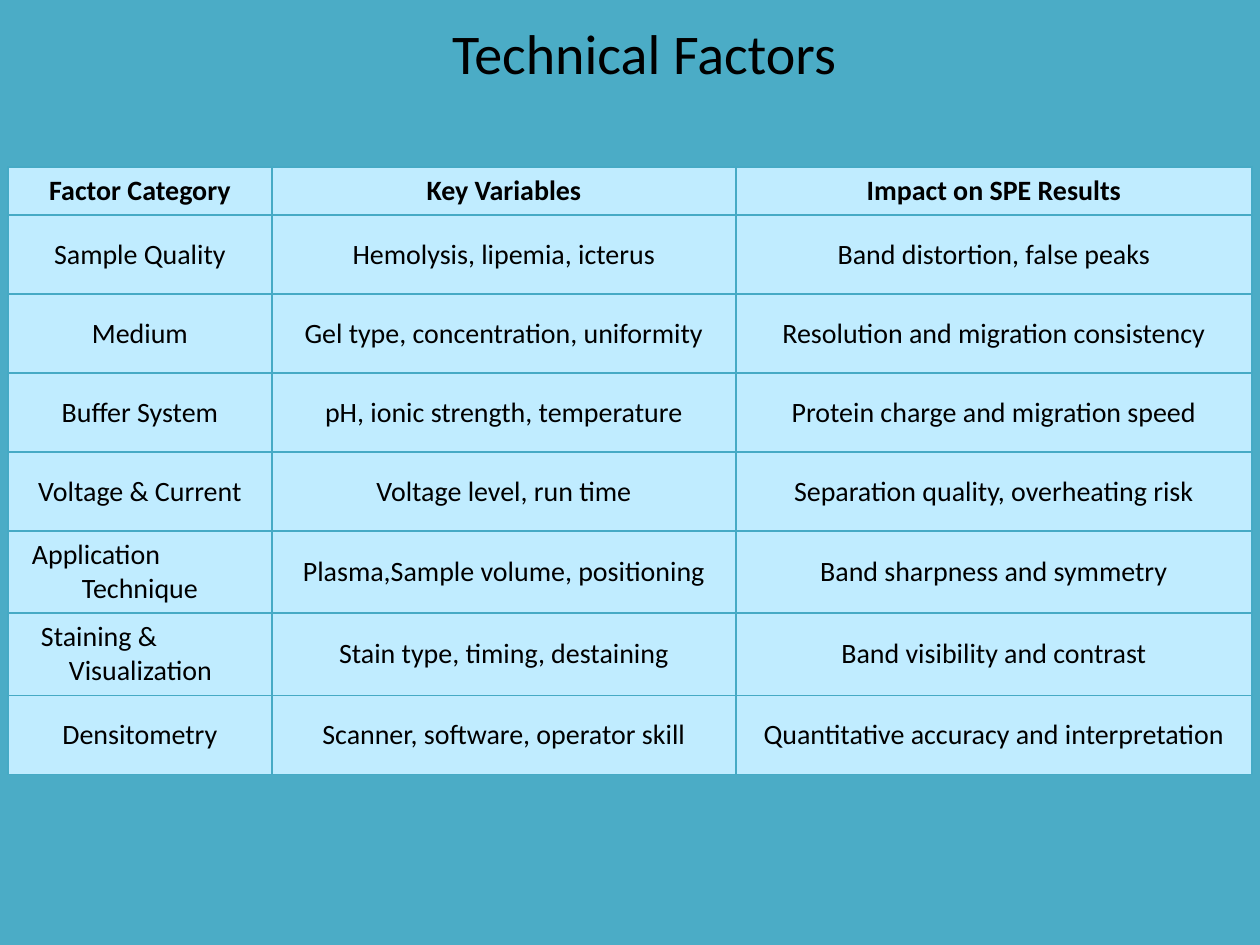
import pptx
import pptx.dml.color
import pptx.enum.text
import pptx.oxml.ns
import pptx.util
from lxml import etree

PX = 914400 / 168
COLORS = {"background": "4BACC6", "cell": "C0ECFF", "border": "46AAC5", "text": "000000"}
ALIGN = pptx.enum.text.PP_ALIGN
MIDDLE = pptx.enum.text.MSO_ANCHOR.MIDDLE

COLUMN_WIDTHS = [264, 464, 516]
HEADER_HEIGHT, ROW_HEIGHT = 47, 79
FACTORS = [
    ("Factor Category", "Key Variables", "Impact on SPE Results"),
    ("Sample Quality", "Hemolysis, lipemia, icterus", "Band distortion, false peaks"),
    ("Medium", "Gel type, concentration, uniformity", "Resolution and migration consistency"),
    ("Buffer System", "pH, ionic strength, temperature", "Protein charge and migration speed"),
    ("Voltage & Current", "Voltage level, run time", "Separation quality, overheating risk"),
    ("Application Technique", "Plasma,Sample volume, positioning", "Band sharpness and symmetry"),
    ("Staining & Visualization", "Stain type, timing, destaining", "Band visibility and contrast"),
    ("Densitometry", "Scanner, software, operator skill", "Quantitative accuracy and interpretation"),
]
# Wrapped labels: left margin and first-line indent in px
HANGING = {"Application Technique": (59, -50), "Staining & Visualization": (46, -28)}


def emu(px):
    return pptx.util.Emu(round(px * PX))


def rgb(name):
    return pptx.dml.color.RGBColor.from_string(COLORS[name])


def write_text(tf, text, size=12, bold=False, align=ALIGN.CENTER, hanging=None):
    tf.word_wrap = True
    p = tf.paragraphs[0]
    p.alignment = align
    if hanging:
        p_pr = p._p.get_or_add_pPr()
        for key, px in zip(("marL", "indent"), hanging):
            p_pr.set(key, str(emu(px)))
    r = p.add_run()
    r.text = text
    r.font.name = "Calibri"
    r.font.size = pptx.util.Pt(size)
    r.font.bold = bold
    r.font.color.rgb = rgb("text")


def set_borders(cell):
    tc_pr = cell._tc.get_or_add_tcPr()
    qn = pptx.oxml.ns.qn
    for i, side in enumerate(("lnL", "lnR", "lnT", "lnB")):
        line = etree.Element(qn(f"a:{side}"), w=str(pptx.util.Pt(0.75)))
        fill = etree.SubElement(line, qn("a:solidFill"))
        etree.SubElement(fill, qn("a:srgbClr"), val=COLORS["border"])
        tc_pr.insert(i, line)


def add_title(s, x, y, w, h):
    tf = s.shapes.add_textbox(emu(x), emu(y), emu(w), emu(h)).text_frame
    write_text(tf, "Technical Factors", size=24)


def add_factor_table(s, x, y, w, h):
    table = s.shapes.add_table(len(FACTORS), len(COLUMN_WIDTHS),
                               emu(x), emu(y), emu(w), emu(h)).table
    table.first_row = table.horz_banding = False
    for column, width in zip(table.columns, COLUMN_WIDTHS):
        column.width = emu(width)
    for i, row in enumerate(FACTORS):
        table.rows[i].height = emu(ROW_HEIGHT if i else HEADER_HEIGHT)
        for j, text in enumerate(row):
            cell = table.cell(i, j)
            cell.vertical_anchor = MIDDLE
            cell.margin_left = cell.margin_right = emu(15)
            cell.margin_top = cell.margin_bottom = emu(7)
            cell.fill.solid()
            cell.fill.fore_color.rgb = rgb("cell")
            set_borders(cell)
            hanging = HANGING.get(text)
            write_text(cell.text_frame, text, bold=i == 0, hanging=hanging,
                       align=ALIGN.LEFT if hanging else ALIGN.CENTER)


def main():
    prs = pptx.Presentation()
    prs.slide_width, prs.slide_height = emu(1260), emu(945)
    s = prs.slides.add_slide(prs.slide_layouts[6])
    s.background.fill.solid()
    s.background.fill.fore_color.rgb = rgb("background")
    add_factor_table(s, 8, 167, sum(COLUMN_WIDTHS),
                     HEADER_HEIGHT + ROW_HEIGHT * (len(FACTORS) - 1))
    add_title(s, 329, 10, 630, 106)
    prs.save("out.pptx")


if __name__ == "__main__":
    main()
